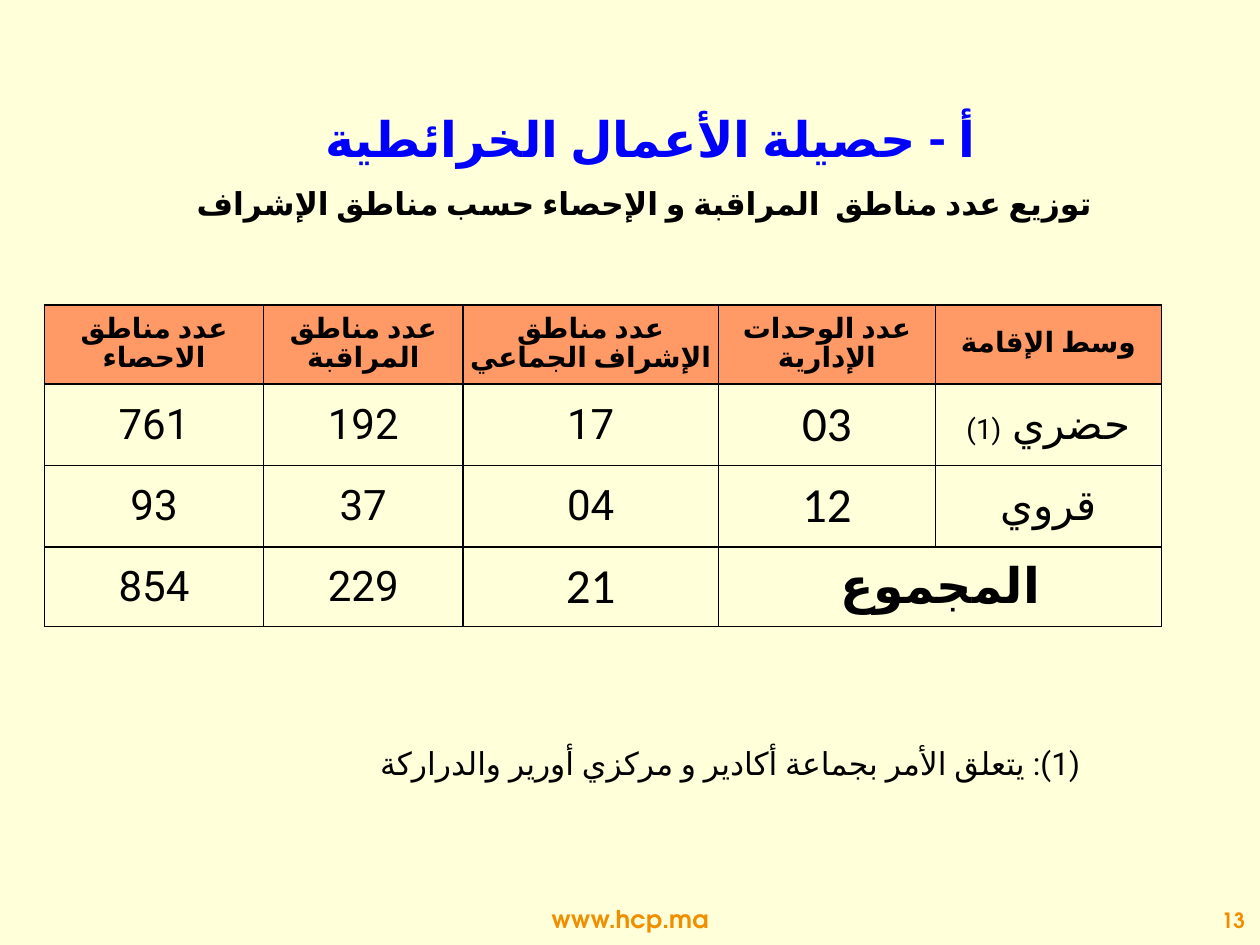
from dataclasses import dataclass

from lxml.etree import SubElement
from pptx import Presentation
from pptx.dml.color import RGBColor
from pptx.enum.lang import MSO_LANGUAGE_ID
from pptx.enum.text import MSO_ANCHOR, PP_ALIGN
from pptx.oxml.ns import qn
from pptx.util import Pt


@dataclass(frozen=True)
class Style:
    size: float
    font: str
    color: str = "000000"
    bold: bool = False


@dataclass(frozen=True)
class Theme:
    background: str = "FFFFD9"
    header_fill: str = "FF9966"
    border: str = "000000"
    arabic_font: str = "Roboto"
    title: Style = Style(28, "Arial", "0000FF", True)
    subtitle: Style = Style(18, "Arial", bold=True)
    header: Style = Style(16, "Times New Roman", bold=True)
    number: Style = Style(24, "Roboto")
    key_number: Style = Style(28, "Calibri")
    label: Style = Style(24, "Arial")
    mark: Style = Style(16, "Arial")
    total: Style = Style(28, "Arial", bold=True)
    note: Style = Style(18, "Arial")
    site: Style = Style(14, "TeX Gyre Adventor", "F18E00", True)
    page_number: Style = Style(12, "TeX Gyre Adventor", "F18E00", True)


THEME = Theme()
HEADERS = ["عدد مناطق الاحصاء", "عدد مناطق المراقبة", "عدد مناطق الإشراف الجماعي",
           "عدد الوحدات الإدارية", "وسط الإقامة"]
ROWS = [["761", "192", "17", "03", "حضري "],
        ["93", "37", "04", "12", "قروي"],
        ["854", "229", "21", "المجموع"]]
COLUMN_WIDTHS = [125.3, 113.8, 146.2, 123.8, 129.3]
ROW_HEIGHTS = [45.2, 46.6, 46.6, 45.6]


def add_span(para, text, style):
    span = para.add_run()
    span.text = text
    span.font.size = Pt(style.size)
    span.font.name = style.font
    span.font.bold = style.bold
    span.font.color.rgb = RGBColor.from_string(style.color)
    if style.font in ("Arial", "Times New Roman"):
        span.font.language_id = MSO_LANGUAGE_ID.ARABIC_MOROCCO
        SubElement(span.font._element, qn("a:cs"), typeface=THEME.arabic_font)


def write(para, text, style, align=PP_ALIGN.CENTER, rtl=False):
    para.alignment = align
    if rtl:
        para._p.get_or_add_pPr().set("rtl", "1")
    add_span(para, text, style)


def add_text_frame(page, box, anchor=MSO_ANCHOR.TOP):
    frame = page.shapes.add_textbox(*map(Pt, box)).text_frame
    frame.word_wrap = True
    frame.vertical_anchor = anchor
    return frame


def add_heading(page, box):
    frame = add_text_frame(page, box)
    frame.margin_top = Pt(6)
    write(frame.paragraphs[0], "أ - حصيلة الأعمال الخرائطية ", THEME.title, rtl=True)
    para = frame.add_paragraph()
    para.space_before = Pt(9.5)
    write(para, "توزيع عدد مناطق  المراقبة و الإحصاء حسب مناطق الإشراف",
          THEME.subtitle, rtl=True)


def add_borders(cell):
    properties = cell._tc.get_or_add_tcPr()
    for index, side in enumerate(("a:lnL", "a:lnR", "a:lnT", "a:lnB")):
        line = properties.makeelement(qn(side), {"w": str(Pt(1))})
        fill = SubElement(line, qn("a:solidFill"))
        SubElement(fill, qn("a:srgbClr"), val=THEME.border)
        properties.insert(index, line)


def prepare_cell(cell, fill=None):
    cell.vertical_anchor = MSO_ANCHOR.MIDDLE
    cell.margin_left = cell.margin_right = Pt(3.6)
    cell.margin_top = cell.margin_bottom = 0
    if fill:
        cell.fill.solid()
        cell.fill.fore_color.rgb = RGBColor.from_string(fill)
    else:
        cell.fill.background()
    add_borders(cell)


def add_zone_table(page, left, top):
    table = page.shapes.add_table(
        len(ROW_HEIGHTS), len(COLUMN_WIDTHS), Pt(left), Pt(top),
        Pt(sum(COLUMN_WIDTHS)), Pt(sum(ROW_HEIGHTS))).table
    table.first_row = table.horz_banding = False
    for column, width in zip(table.columns, COLUMN_WIDTHS):
        column.width = Pt(width)
    for row, height in zip(table.rows, ROW_HEIGHTS):
        row.height = Pt(height)
    for index, row in enumerate(table.rows):
        for cell in row.cells:
            prepare_cell(cell, THEME.header_fill if index == 0 else None)
    table.cell(3, 3).merge(table.cell(3, 4))

    for column, text in enumerate(HEADERS):
        para = table.cell(0, column).text_frame.paragraphs[0]
        para.line_spacing = 0.88
        write(para, text, THEME.header)
    styles = [THEME.number] * 3 + [THEME.key_number, THEME.label]
    total_styles = [THEME.number] * 2 + [THEME.key_number, THEME.total]
    for index, texts in enumerate(ROWS, 1):
        row_styles = total_styles if index == len(ROWS) else styles
        for column, (text, style) in enumerate(zip(texts, row_styles)):
            para = table.cell(index, column).text_frame.paragraphs[0]
            write(para, text, style, rtl=style in (THEME.label, THEME.total))
    add_span(table.cell(1, 4).text_frame.paragraphs[0], "(1)", THEME.mark)


def add_note(page, box):
    frame = add_text_frame(page, box)
    write(frame.paragraphs[0], "(1): يتعلق الأمر بجماعة أكادير و مركزي أورير والدراركة",
          THEME.note, PP_ALIGN.RIGHT, rtl=True)


def add_footer(page, site_box, number_box):
    site = add_text_frame(page, site_box)
    write(site.paragraphs[0], "www.hcp.ma", THEME.site)
    number = add_text_frame(page, number_box, MSO_ANCHOR.MIDDLE)
    write(number.paragraphs[0], "13", THEME.page_number, PP_ALIGN.RIGHT)


def main():
    deck = Presentation()
    deck.slide_width, deck.slide_height = Pt(720), Pt(540)
    page = deck.slides.add_slide(deck.slide_layouts[6])
    page.background.fill.solid()
    page.background.fill.fore_color.rgb = RGBColor.from_string(THEME.background)
    add_footer(page, (275, 513.2, 170, 24), (609, 513.2, 109.5, 25.2))
    add_heading(page, (73.4, 56.2, 589.7, 103))
    add_zone_table(page, 25.4, 174.2)
    add_note(page, (95.8, 421.9, 528.5, 28.8))
    deck.save("out.pptx")


if __name__ == "__main__":
    main()
